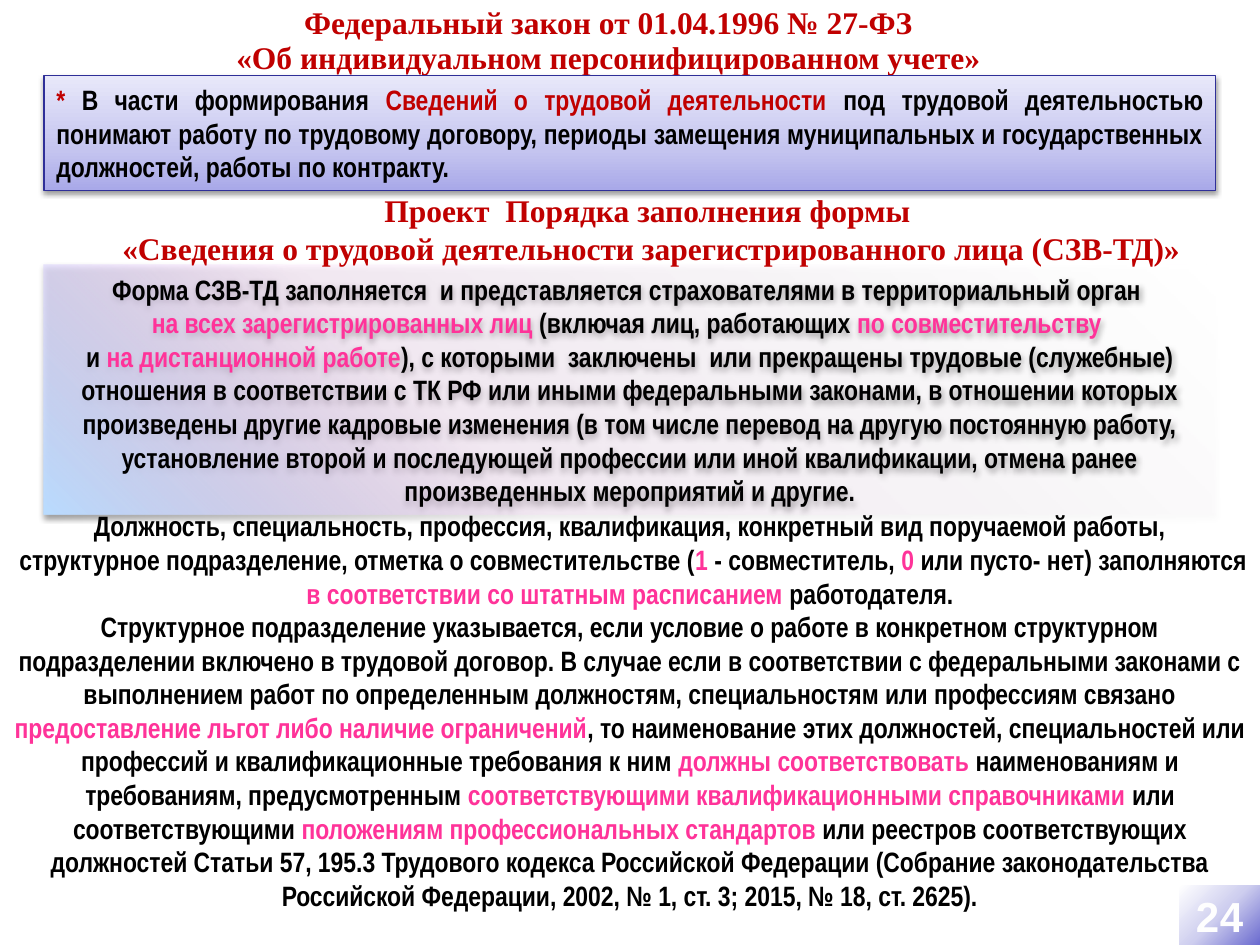
from lxml import etree
from pptx import Presentation
from pptx import util as u
from pptx.dml.color import RGBColor
from pptx.enum import shapes, text
from pptx.oxml import ns

WIDTH, HEIGHT = u.Inches(10), u.Inches(7.5)
COL, ROW = WIDTH / 100, HEIGHT / 100

RED = RGBColor(0xC0, 0x00, 0x00)
PINK = RGBColor(0xFF, 0x33, 0x99)
BLACK = RGBColor(0x00, 0x00, 0x00)
NAVY = RGBColor(0x2F, 0x2F, 0x98)
OUTLINE = RGBColor(0x20, 0x20, 0x86)
DIGITS = RGBColor(0xFE, 0xFE, 0xFE)
SHADE = RGBColor(0x00, 0x00, 0x00)
LILAC = [(0, RGBColor(0xA9, 0xA9, 0xE9), 100),
         (35, RGBColor(0xC4, 0xC4, 0xEF), 100),
         (100, RGBColor(0xE8, 0xE8, 0xFA), 100)]
PASTEL = [(0, RGBColor(0xB9, 0xDC, 0xFF), 100),
          (35, RGBColor(0xFF, 0xCC, 0xFF), 18),
          (100, RGBColor(0xFF, 0xFF, 0xFF), 0)]
CORNER = [(0, RGBColor(0x6B, 0x6B, 0xCF), 100),
          (50, RGBColor(0xCE, 0xCE, 0xEF), 100),
          (100, RGBColor(0xFF, 0xFF, 0xFF), 100)]

LAW = """Федеральный закон от 01.04.1996 № 27-ФЗ 
«Об индивидуальном персонифицированном учете» """
DEFINITION = (
    "|* |В части формирования |Сведений о трудовой деятельности |под трудовой "
    "деятельностью понимают работу по трудовому договору, периоды замещения "
    "муниципальных и государственных должностей, работы по контракту.")
DRAFT = """Проект  Порядка заполнения формы 
«Сведения о трудовой деятельности зарегистрированного лица (СЗВ-ТД)»"""
FORM = (
    "Форма СЗВ-ТД заполняется  и представляется страхователями в "
    "территориальный орган \n"
    "|на всех зарегистрированных лиц |(включая лиц, работающих "
    "|по совместительству \n"
    "и |на дистанционной работе|), с которыми  заключены  или прекращены "
    "трудовые (служебные) отношения в соответствии с ТК РФ или иными "
    "федеральными законами, в отношении которых произведены другие кадровые "
    "изменения (в том числе перевод на другую постоянную работу, установление "
    "второй и последующей профессии или иной квалификации, отмена ранее "
    "произведенных мероприятий и другие.")
POSITION = (
    "Должность, специальность, профессия, квалификация, конкретный вид "
    "поручаемой работы,\n"
    " структурное подразделение, отметка о совместительстве (|1| - "
    "совместитель, |0| или пусто- нет) заполняются |в соответствии со штатным "
    "расписанием |работодателя.\n")
DEPARTMENT = (
    "Структурное подразделение указывается, если условие о работе в конкретном "
    "структурном подразделении включено в трудовой договор. В случае если в "
    "соответствии с федеральными законами с выполнением работ по определенным "
    "должностям, специальностям или профессиям связано |предоставление льгот "
    "либо наличие ограничений|, то наименование этих должностей, ")
STANDARDS = (
    "специальностей или профессий и квалификационные требования к ним |должны "
    "соответствовать |наименованиям и требованиям, предусмотренным "
    "|соответствующими квалификационными справочниками |или соответствующими "
    "|положениям профессиональных стандартов |или реестров соответствующих "
    "должностей Статьи 57, 195.3 Трудового кодекса Российской Федерации "
    "(Собрание законодательства Российской Федерации, 2002, № 1, ст. 3; 2015, "
    "№ 18, ст. 2625).")


def place(left, top, width, height):
    return [round(n) for n in (left * COL, top * ROW, width * COL, height * ROW)]


def child(parent, tag, **attributes):
    return etree.SubElement(parent, ns.qn("a:" + tag),
                            {name: str(value) for name, value in attributes.items()})


def write(holder, wording, font, size, color, accent=None, align="CENTER"):
    frame = holder.text_frame
    frame.word_wrap = True
    for number, line in enumerate(wording.split("\n")):
        paragraph = frame.add_paragraph() if number else frame.paragraphs[0]
        paragraph.alignment = text.PP_ALIGN[align]
        paragraph.font.name = font
        paragraph.font.size = u.Pt(size)
        paragraph.font.bold = True
        for part, words in enumerate(line.split("|")):
            if words:
                run = paragraph.add_run()
                run.text = words
                run.font.color.rgb = accent if part % 2 else color
    return frame


def label(slide, spot, wording, *style):
    box = slide.shapes.add_textbox(*place(*spot))
    return write(box, wording, *style)


def panel(slide, spot, stops, angle=None):
    box = slide.shapes.add_shape(shapes.MSO_SHAPE.RECTANGLE, *place(*spot))
    box.shadow.inherit = False
    box.line.fill.background()
    box.fill.gradient()
    gradient = box.element.spPr.find(ns.qn("a:gradFill"))
    for part in list(gradient):
        gradient.remove(part)
    stop_list = child(gradient, "gsLst")
    for position, color, opacity in stops:
        stop = child(stop_list, "gs", pos=position * 1000)
        tint = child(stop, "srgbClr", val=color)
        if opacity < 100:
            child(tint, "alpha", val=opacity * 1000)
    if angle is None:
        child(child(gradient, "path", path="circle"), "fillToRect", l=100000, t=100000)
    else:
        child(gradient, "lin", ang=angle * 60000, scaled=0)
    return box


def drop_shadow(box):
    effects = box.element.spPr.find(ns.qn("a:effectLst"))
    shadow = child(effects, "outerShdw", blurRad=u.Pt(3.1), dist=u.Pt(1.6),
                   dir=90 * 60000, rotWithShape=0)
    child(child(shadow, "srgbClr", val=SHADE), "alpha", val=38000)


def page_number(slide, spot, number):
    badge = panel(slide, spot, CORNER)
    frame = write(badge, number, "Arial", 24, DIGITS)
    frame.vertical_anchor = text.MSO_ANCHOR.MIDDLE
    properties = frame.paragraphs[0].runs[0].font._element
    properties.set("spc", "50")
    outline = child(properties, "ln", w=u.Pt(1))
    child(child(outline, "solidFill"), "srgbClr", val=OUTLINE)
    properties.insert(0, outline)


def main():
    deck = Presentation()
    deck.slide_width, deck.slide_height = WIDTH, HEIGHT
    slide = deck.slides.add_slide(deck.slide_layouts[6])

    law = label(slide, (0, 0, 97.2, 8.8), LAW, "Times New Roman", 18, RED)
    for paragraph in law.paragraphs:
        paragraph.line_spacing = 0.93

    definition = panel(slide, (3.5, 8, 93, 12.13), LILAC, 270)
    definition.line.color.rgb = NAVY
    definition.line.width = u.Pt(0.75)
    drop_shadow(definition)
    write(definition, DEFINITION, "Arial Narrow", 16, BLACK, RED, "JUSTIFY")

    form = panel(slide, (3.5, 28, 93, 26.5), PASTEL, 315)
    drop_shadow(form)
    write(form, FORM, "Arial Narrow", 16, BLACK, PINK)

    draft = label(slide, (1.2, 19.6, 96.1, 9.5), DRAFT, "Times New Roman", 18, RED)
    for paragraph in draft.paragraphs:
        paragraph.level = 1
        indents = paragraph._p.get_or_add_pPr()
        indents.set("marL", str(u.Inches(0.5)))
        indents.set("indent", str(u.Inches(-0.01)))

    label(slide, (0, 53.2, 100, 44.4), POSITION + DEPARTMENT + STANDARDS,
          "Arial Narrow", 16, BLACK, PINK)
    page_number(slide, (93.6, 93.73, 6.4, 6.27), "24")
    deck.save("out.pptx")


if __name__ == "__main__":
    main()
